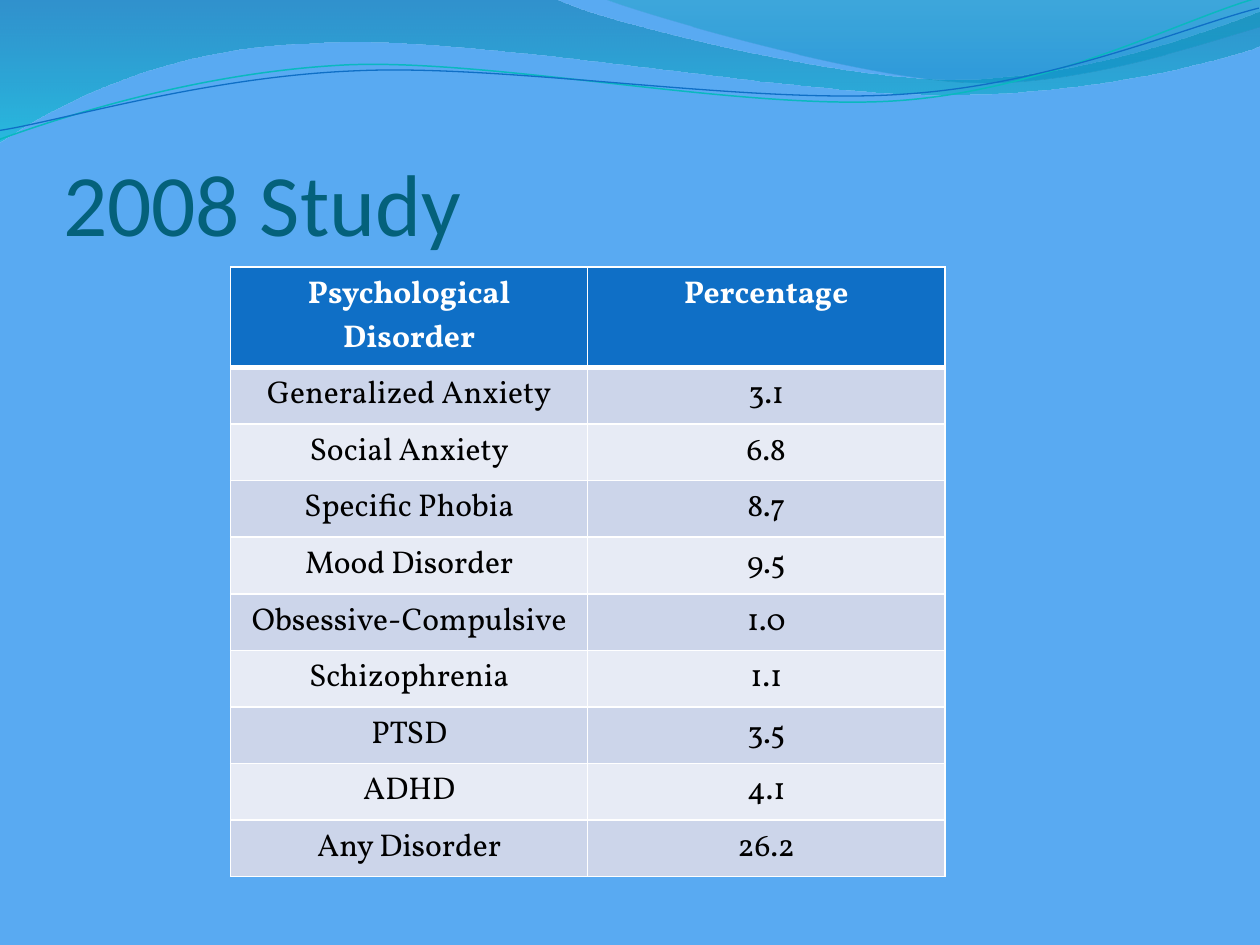
import lxml.etree
import pptx
import pptx.dml.color
import pptx.enum.text
import pptx.oxml.ns
import pptx.util

PX = 9144
SLIDE = (0, 0, 1000, 750)
ALIGN = pptx.enum.text.PP_ALIGN
ANCHOR = pptx.enum.text.MSO_ANCHOR
qn = pptx.oxml.ns.qn

BACKGROUND, WHITE, BLACK = "59AAF2", "FFFFFF", "000000"
HEADER_BLUE, TITLE_TEAL = "0F6FC6", "04617B"
BANDS = ("CCD5EA", "E7EBF5")

RIBBONS = [
    ((0, 0),
     [[(440, -1)],
      [(476, 17), (664, 63), (758, 63)],
      [(853, 63), (958, 26), (1000, 9)],
      [(1001, 36)],
      [(983, 44), (870, 76), (746, 75)],
      [(622, 75), (382, 28), (257, 34)],
      [(129, 36), (46, 83), (-1, 113)]],
     [(0, "0074A1", 45), (100, "00C6CF", 55)]),
    ((479, -1),
     [[(509, 11), (682, 62), (769, 65)],
      [(856, 69), (961, 32), (1000, 21)],
      [(1000, 0)]],
     [(0, "00A1A9", 30), (80, "008BBF", 45)]),
]
STRAND_ROTATION = 357.3
STRANDS = [
    ((-2, 87),
     [[(47, 72), (158, 41), (277, 41)],
      [(396, 42), (591, 93), (712, 90)],
      [(832, 87), (940, 36), (1000, 22)]],
     "0AB8BF", 0.85),
    ((-2, 80),
     [[(46, 75), (164, 45), (283, 46)],
      [(403, 46), (596, 88), (716, 85)],
      [(835, 83), (942, 42), (1001, 30)]],
     "0F6FC6", 0.75),
]
DISORDERS = [
    ("Psychological Disorder", "Percentage"),
    ("Generalized Anxiety", "3.1"),
    ("Social Anxiety", "6.8"),
    ("Specific Phobia", "8.7"),
    ("Mood Disorder", "9.5"),
    ("Obsessive-Compulsive", "1.0"),
    ("Schizophrenia", "1.1"),
    ("PTSD", "3.5"),
    ("ADHD", "4.1"),
    ("Any Disorder", "26.2"),
]


def px(length):
    return pptx.util.Emu(round(length * PX))


def rgb(color):
    return pptx.dml.color.RGBColor.from_string(color)


def write_text(frame, text, size, font, color, bold=False, align=ALIGN.LEFT):
    paragraph = frame.paragraphs[0]
    paragraph.alignment = align
    run = paragraph.add_run()
    run.text = text
    run.font.size = pptx.util.Pt(size)
    run.font.name = font
    run.font.bold = bold
    run.font.color.rgb = rgb(color)


def bend(outline, segments):
    lines = iter(list(outline.element.iter(qn("a:lnTo"))))
    for segment in segments:
        pieces = [next(lines) for _ in segment]
        if len(segment) == 3:
            curve = lxml.etree.Element(qn("a:cubicBezTo"))
            pieces[0].addprevious(curve)
            for piece in pieces:
                curve.append(piece[0])
                piece.getparent().remove(piece)


def add_outline(slide, box, start, segments, close):
    left, top = box[:2]
    builder = slide.shapes.build_freeform(left + start[0], top + start[1], scale=PX)
    points = [(left + x, top + y) for segment in segments for x, y in segment]
    builder.add_line_segments(points, close=close)
    outline = builder.convert_to_shape()
    outline.shadow.inherit = False
    bend(outline, segments)
    return outline


def add_waves(slide, box):
    for start, segments, stops in RIBBONS:
        ribbon = add_outline(slide, box, start, segments, True)
        ribbon.line.fill.background()
        ribbon.fill.gradient()
        ribbon.fill.gradient_angle = 270
        for stop, (position, color, _) in zip(ribbon.fill.gradient_stops, stops):
            stop.position = position / 100
            stop.color.rgb = rgb(color)
        tints = ribbon.element.spPr.iter(qn("a:srgbClr"))
        for tint, (_, _, opacity) in zip(tints, stops):
            lxml.etree.SubElement(tint, qn("a:alpha"), val=str(opacity * 1000))
    for start, segments, color, width in STRANDS:
        strand = add_outline(slide, box, start, segments, False)
        strand.rotation = STRAND_ROTATION
        strand.fill.background()
        strand.line.color.rgb = rgb(color)
        strand.line.width = pptx.util.Pt(width)


def place_title(slide, box, text):
    title = slide.shapes.title
    title.element.getparent().append(title.element)
    title.left, title.top, title.width, title.height = map(px, box)
    frame = title.text_frame
    frame.word_wrap = True
    frame.auto_size = pptx.enum.text.MSO_AUTO_SIZE.NONE
    frame.vertical_anchor = ANCHOR.BOTTOM
    frame.margin_left = frame.margin_right = frame.margin_bottom = 0
    frame.margin_top = px(5)
    write_text(frame, text, size=50, font="Calibri", color=TITLE_TEAL)


def add_borders(cell, widths):
    properties = cell._tc.get_or_add_tcPr()
    for side, width in zip("LRTB", widths):
        border = lxml.etree.SubElement(
            properties, qn(f"a:ln{side}"), w=str(pptx.util.Pt(width)))
        paint = lxml.etree.SubElement(border, qn("a:solidFill"))
        lxml.etree.SubElement(paint, qn("a:srgbClr"), val=WHITE)


def add_disorder_table(slide, box, records):
    columns = len(records[0])
    table = slide.shapes.add_table(len(records), columns, *map(px, box)).table
    for column in table.columns:
        column.width = px(box[2] / columns)
    for row in table.rows:
        row.height = px(box[3] / len(records))
    for row_index, record in enumerate(records):
        header = row_index == 0
        fill = HEADER_BLUE if header else BANDS[(row_index - 1) % 2]
        widths = (1, 1, 3 if row_index == 1 else 1, 3 if header else 1)
        for column_index, text in enumerate(record):
            cell = table.cell(row_index, column_index)
            add_borders(cell, widths)
            cell.fill.solid()
            cell.fill.fore_color.rgb = rgb(fill)
            write_text(cell.text_frame, text, size=18, font="Vollkorn",
                       color=WHITE if header else BLACK, bold=header,
                       align=ALIGN.CENTER)


def main():
    deck = pptx.Presentation()
    deck.slide_width, deck.slide_height = px(SLIDE[2]), px(SLIDE[3])
    slide = deck.slides.add_slide(deck.slide_layouts[5])
    slide.background.fill.solid()
    slide.background.fill.fore_color.rgb = rgb(BACKGROUND)
    add_waves(slide, SLIDE)
    place_title(slide, (50, 77, 900, 125), "2008 Study")
    add_disorder_table(slide, (183, 212, 567, 410), DISORDERS)
    deck.save("out.pptx")


if __name__ == "__main__":
    main()
